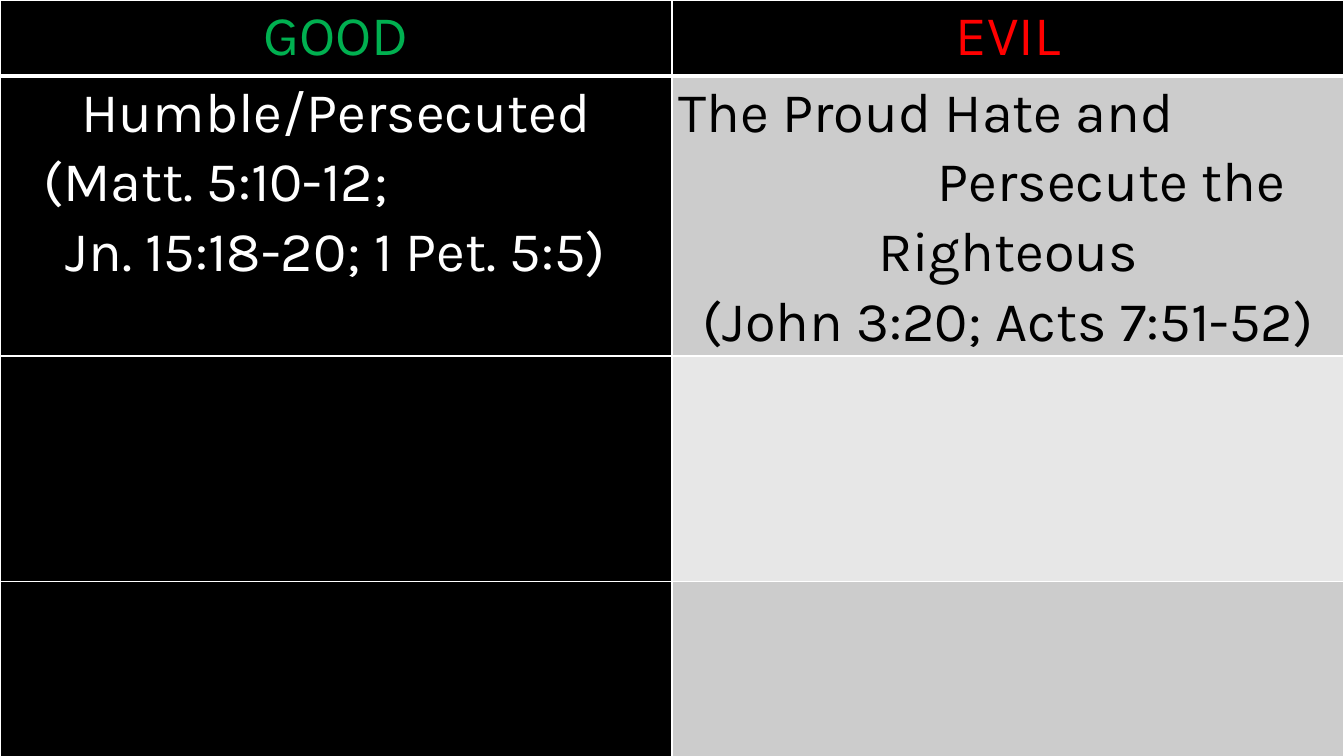
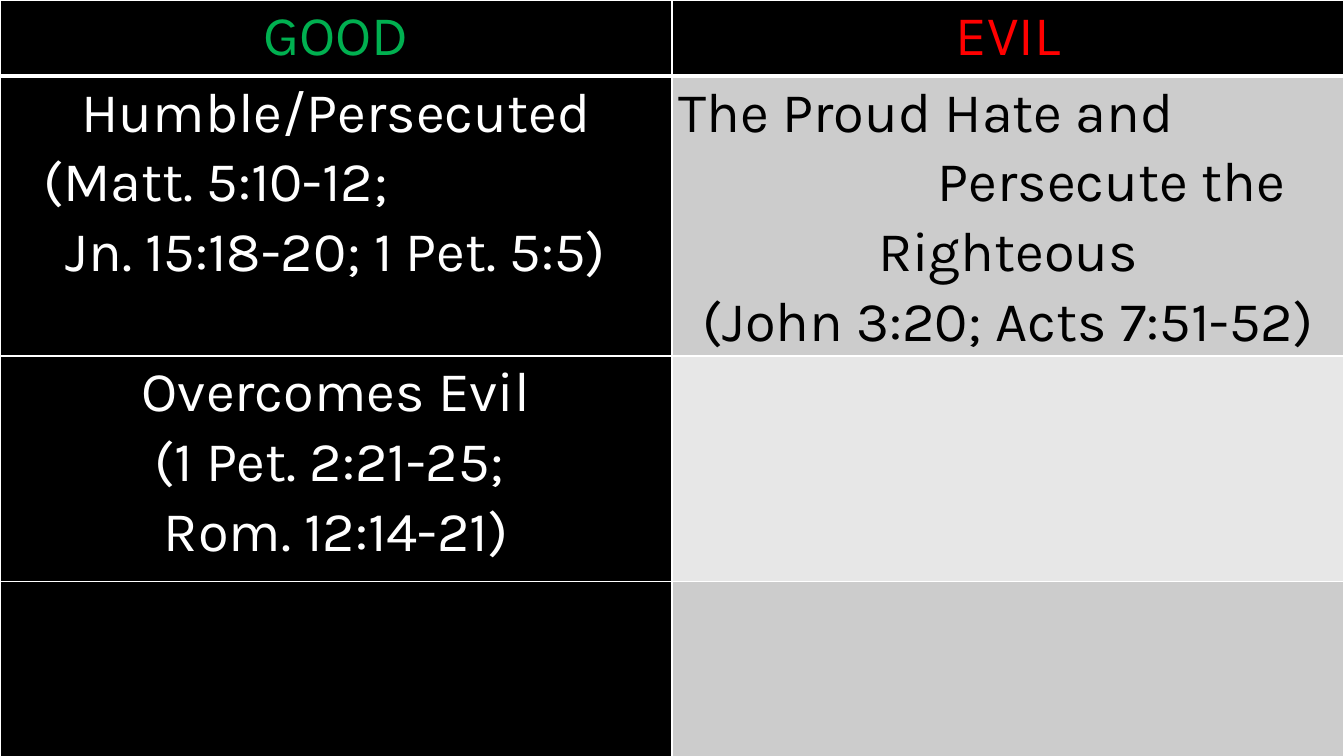
from dataclasses import dataclass

from lxml import etree
from pptx import Presentation
from pptx import util as u
from pptx.dml.color import RGBColor
from pptx.enum import text
from pptx.oxml import ns


@dataclass(frozen=True)
class Theme:
    font: str = "Karla"
    size: float = 40
    spacing: float = 1.07
    inset: float = 5
    thin: float = 1
    thick: float = 3
    black: str = "000000"
    white: str = "FFFFFF"
    good: str = "00B050"
    evil: str = "FF0000"
    band: str = "CCCCCC"
    pale_band: str = "E7E7E7"


@dataclass(frozen=True)
class Line:
    words: str
    indent: float | None = None


THEME = Theme()
WIDTH, HEIGHT = 960, 540
ROW_HEIGHTS = (54.5, 163.5, 161, 161)
HEADINGS = ((Line("GOOD"),), (Line("EVIL"),))
HUMBLE = (
    Line("Humble/Persecuted"),
    Line("(Matt. 5:10-12;", 26),
    Line("Jn. 15:18-20; 1 Pet. 5:5)"),
)
PROUD = (
    Line("The Proud Hate and", 0),
    Line("Persecute the", 185),
    Line("Righteous"),
    Line("(John 3:20; Acts 7:51-52)"),
)
OVERCOMES = (
    Line("Overcomes Evil"),
    Line("(1 Pet. 2:21-25; "),
    Line("Rom. 12:14-21)"),
)
STEPS = (
    ((HUMBLE, PROUD), ((), ()), ((), ())),
    ((HUMBLE, PROUD), (OVERCOMES, ()), ((), ())),
)


def write_line(paragraph, line, color):
    paragraph.line_spacing = THEME.spacing
    if line.indent is None:
        paragraph.alignment = text.PP_ALIGN.CENTER
    else:
        paragraph.alignment = text.PP_ALIGN.LEFT
        paragraph._p.get_or_add_pPr().set("marL", str(u.Pt(line.indent)))
    run = paragraph.add_run()
    run.text = line.words
    run.font.name = THEME.font
    run.font.size = u.Pt(THEME.size)
    run.font.bold = False
    run.font.color.rgb = RGBColor.from_string(color)


def draw_borders(cell, top, bottom):
    properties = cell._tc.get_or_add_tcPr()
    widths = {"lnL": THEME.thin, "lnR": THEME.thin, "lnT": top, "lnB": bottom}
    for position, (side, width) in enumerate(widths.items()):
        border = etree.Element(ns.qn(f"a:{side}"), w=str(u.Pt(width)))
        fill = etree.SubElement(border, ns.qn("a:solidFill"))
        etree.SubElement(fill, ns.qn("a:srgbClr"), val=THEME.white)
        properties.insert(position, border)


def fill_cell(cell, lines, fill, color):
    cell.margin_left = cell.margin_right = u.Pt(THEME.inset)
    cell.margin_top = cell.margin_bottom = 0
    cell.fill.solid()
    cell.fill.fore_color.rgb = RGBColor.from_string(fill)
    for number, line in enumerate(lines):
        frame = cell.text_frame
        paragraph = frame.add_paragraph() if number else frame.paragraphs[0]
        write_line(paragraph, line, color)


def cell_colors(row, column):
    if row == 0:
        return THEME.black, (THEME.good, THEME.evil)[column]
    if column == 0:
        return THEME.black, THEME.white
    return (THEME.band if row % 2 else THEME.pale_band), THEME.black


def add_comparison(slide, contrasts):
    rows = (HEADINGS, *contrasts)
    table = slide.shapes.add_table(
        len(rows), len(HEADINGS), 0, 0, u.Pt(WIDTH), u.Pt(HEIGHT)
    ).table
    table.first_row = table.horz_banding = False
    for row, entries in enumerate(rows):
        table.rows[row].height = u.Pt(ROW_HEIGHTS[row])
        top = THEME.thick if row == 1 else THEME.thin
        bottom = THEME.thick if row == 0 else THEME.thin
        for column, lines in enumerate(entries):
            cell = table.cell(row, column)
            fill_cell(cell, lines, *cell_colors(row, column))
            draw_borders(cell, top, bottom)


def main():
    deck = Presentation()
    deck.slide_width, deck.slide_height = u.Pt(WIDTH), u.Pt(HEIGHT)
    backdrop = deck.slide_master.background.fill
    backdrop.solid()
    backdrop.fore_color.rgb = RGBColor.from_string(THEME.black)
    blank = deck.slide_layouts[6]
    for contrasts in STEPS:
        add_comparison(deck.slides.add_slide(blank), contrasts)
    deck.save("out.pptx")


if __name__ == "__main__":
    main()
